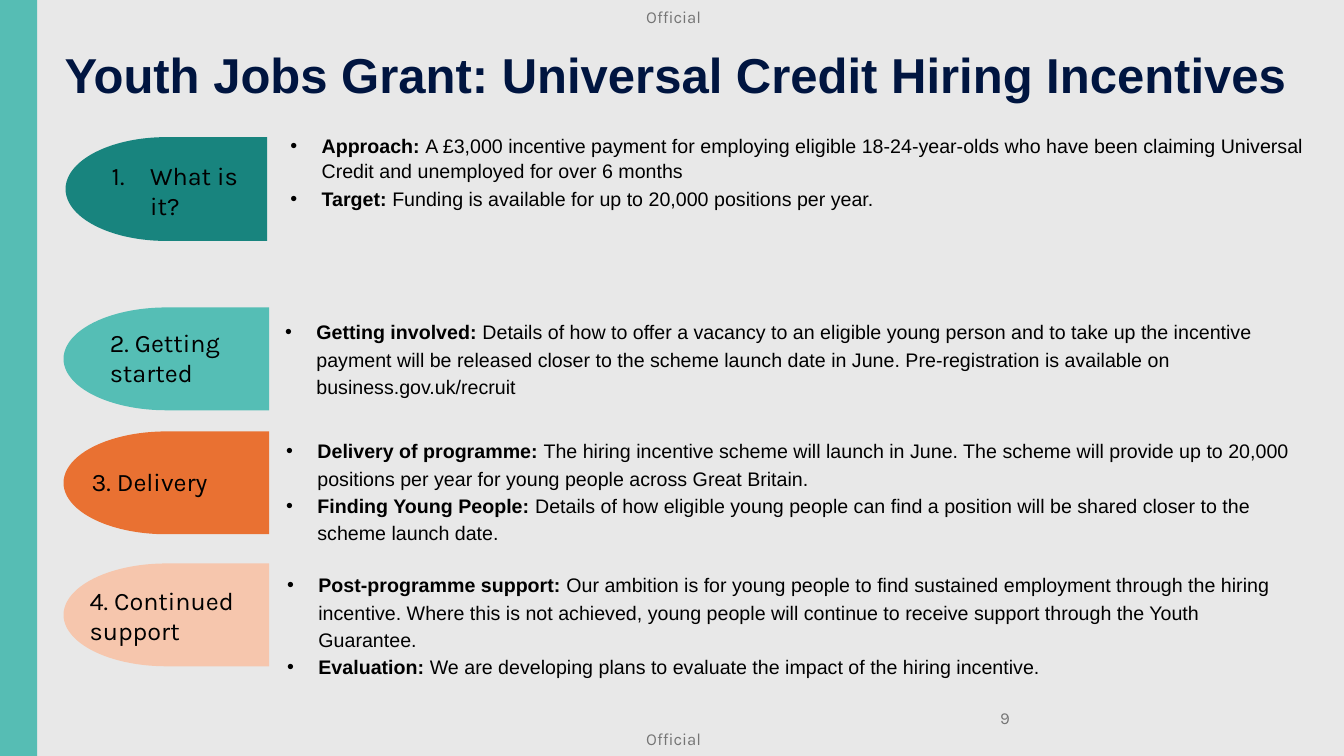
"""Build the Youth Jobs Grant slide with four labelled stages."""
from dataclasses import dataclass
from typing import Any

from lxml import etree
from pptx import Presentation
from pptx.dml.color import RGBColor
from pptx.enum import shapes, text
from pptx.oxml import ns
from pptx import util as u

BACKGROUND = RGBColor(0xE8, 0xE8, 0xE8)
STRIP = RGBColor(0x56, 0xBD, 0xB4)
DARK_TEAL = RGBColor(0x18, 0x84, 0x7E)
TEAL = RGBColor(0x55, 0xBE, 0xB5)
ORANGE = RGBColor(0xE9, 0x71, 0x32)
PEACH = RGBColor(0xF6, 0xC6, 0xAD)
NAVY = RGBColor(0x00, 0x15, 0x40)
BLACK = RGBColor(0, 0, 0)
GREY = RGBColor(0x75, 0x75, 0x75)

Box = tuple[float, float, float, float]

TITLE_FORMAT = {"name": "Arial", "size": u.Pt(35), "bold": True}
BODY_FORMAT = {"name": "Arial", "size": u.Pt(14)}
LABEL_FORMAT = {"name": "Karla", "size": u.Pt(18)}
FOOTER_FORMAT = {"name": "Karla", "size": u.Pt(12)}
FIRST_LIST_FORMAT = {"line_spacing": 1.07, "space_before": u.Pt(2)}
LIST_FORMAT = {"line_spacing": u.Pt(19.5), "space_before": u.Pt(0)}


@dataclass
class Stage:
    label: str
    color: RGBColor
    tab_box: Box
    label_box: Box
    list_box: Box
    points: list[tuple[str, str]]
    numbered: bool = False


STAGES = [
    Stage("What is it?", DARK_TEAL, (0.65, 1.36, 2, 1.03),
          (1.01, 1.54, 1.61, 0.71), (2.78, 1.26, 10.31, 1.83), [
              ("Approach:", "A £3,000 incentive payment for employing eligible 18-24-year-olds "
               "who have been claiming Universal Credit and unemployed for over 6 months"),
              ("Target:", "Funding is available for up to 20,000 positions per year."),
          ], numbered=True),
    Stage("2. Getting started", TEAL, (0.63, 3.05, 2.04, 1.02),
          (0.99, 3.2, 1.61, 0.71), (2.73, 3.09, 10.36, 0.92), [
              ("Getting involved:", "Details of how to offer a vacancy to an eligible young person "
               "and to take up the incentive payment will be released closer to the scheme launch "
               "date in June. Pre-registration is available on business.gov.uk/recruit"),
          ]),
    Stage("3. Delivery", ORANGE, (0.63, 4.28, 2.04, 1.02),
          (0.81, 4.58, 2, 0.4), (2.74, 4.27, 10.36, 1.46), [
              ("Delivery of programme:", "The hiring incentive scheme will launch in June. The "
               "scheme will provide up to 20,000 positions per year for young people across "
               "Great Britain."),
              ("Finding Young People:", "Details of how eligible young people can find a position "
               "will be shared closer to the scheme launch date."),
          ]),
    Stage("4. Continued support", PEACH, (0.63, 5.59, 2.04, 1.02),
          (0.79, 5.76, 2, 0.71), (2.75, 5.6, 10.16, 1.2), [
              ("Post-programme support:", "Our ambition is for young people to find sustained "
               "employment through the hiring incentive. Where this is not achieved, young people "
               "will continue to receive support through the Youth Guarantee."),
              ("Evaluation:", "We are developing plans to evaluate the impact of the hiring "
               "incentive."),
          ]),
]


def apply_format(target: Any, values: dict[str, Any]) -> None:
    for name, value in values.items():
        setattr(target, name, value)


def place(shape: Any, box: Box) -> None:
    for name, value in zip(("left", "top", "width", "height"), box):
        setattr(shape, name, u.Inches(value))


def add_run(paragraph: Any, words: str, values: dict[str, Any], color: RGBColor) -> None:
    run = paragraph.add_run()
    run.text = words
    apply_format(run.font, values)
    run.font.color.rgb = color


def add_bullet(paragraph: Any, indent: float, tag: str, **attributes: str) -> None:
    properties = paragraph._p.get_or_add_pPr()
    properties.set("marL", str(u.Inches(indent)))
    properties.set("indent", str(-u.Inches(indent)))
    if tag == "a:buChar":
        etree.SubElement(properties, ns.qn("a:buFont"), typeface="Arial")
    etree.SubElement(properties, ns.qn(tag), **attributes)


def add_text_box(slide: Any, box: Box) -> Any:
    shape = slide.shapes.add_textbox(*map(u.Inches, box))
    shape.text_frame.word_wrap = True
    return shape


def add_shape(slide: Any, kind: Any, box: Box, color: RGBColor) -> Any:
    shape = slide.shapes.add_shape(kind, *map(u.Inches, box))
    shape.shadow.inherit = False
    shape.fill.solid()
    shape.fill.fore_color.rgb = color
    shape.line.fill.background()
    return shape


def fill_list(shape: Any, points: list[tuple[str, str]], values: dict[str, Any]) -> None:
    frame = shape.text_frame
    for index, (heading, detail) in enumerate(points):
        paragraph = frame.add_paragraph() if index else frame.paragraphs[0]
        add_bullet(paragraph, 0.31, "a:buChar", char="•")
        apply_format(paragraph, values)
        if not index:
            paragraph.space_before = u.Pt(0)
        add_run(paragraph, f"{heading} ", BODY_FORMAT | {"bold": True}, BLACK)
        add_run(paragraph, detail, BODY_FORMAT | {"bold": False}, BLACK)


def add_stage(slide: Any, stage: Stage) -> None:
    tab = add_shape(slide, shapes.MSO_SHAPE.FLOWCHART_DELAY, stage.tab_box, stage.color)
    tab.rotation = 180
    label = add_text_box(slide, stage.label_box)
    paragraph = label.text_frame.paragraphs[0]
    if stage.numbered:
        add_bullet(paragraph, 0.38, "a:buAutoNum", type="arabicPeriod")
    add_run(paragraph, stage.label, LABEL_FORMAT, BLACK)


def add_footer(slide: Any, words: str, box: Box) -> Any:
    shape = add_text_box(slide, box)
    apply_format(shape.text_frame, {
        "margin_left": 0, "margin_top": 0, "margin_right": 0, "margin_bottom": 0,
        "word_wrap": False})
    add_run(shape.text_frame.paragraphs[0], words, FOOTER_FORMAT, GREY)
    return shape


def main() -> None:
    presentation = Presentation()
    presentation.slide_width = u.Inches(13.33)
    presentation.slide_height = u.Inches(7.5)
    slide = presentation.slides.add_slide(presentation.slide_layouts[1])
    slide.background.fill.solid()
    slide.background.fill.fore_color.rgb = BACKGROUND
    add_shape(slide, shapes.MSO_SHAPE.RECTANGLE, (0, 0, 0.37, 7.5), STRIP)

    title = slide.shapes.title
    place(title, (0.54, 0.38, 12.57, 0.71))
    apply_format(title.text_frame, {
        "auto_size": text.MSO_AUTO_SIZE.NONE, "vertical_anchor": text.MSO_ANCHOR.MIDDLE})
    heading = title.text_frame.paragraphs[0]
    heading.alignment = text.PP_ALIGN.LEFT
    add_run(heading, "Youth Jobs Grant: Universal Credit Hiring Incentives", TITLE_FORMAT, NAVY)

    first, *others = STAGES
    body = slide.placeholders[1]
    place(body, first.list_box)
    body.text_frame.auto_size = text.MSO_AUTO_SIZE.NONE
    fill_list(body, first.points, FIRST_LIST_FORMAT)
    for stage in STAGES:
        add_stage(slide, stage)
    for stage in others:
        fill_list(add_text_box(slide, stage.list_box), stage.points, LIST_FORMAT)

    for top in (0.07, 7.23):
        add_footer(slide, "Official", (6.41, top, 0.56, 0.2))
    number = add_footer(slide, "9", (9.92, 6.92, 0.1, 0.4))
    number.text_frame.vertical_anchor = text.MSO_ANCHOR.MIDDLE
    presentation.save("out.pptx")


if __name__ == "__main__":
    main()
